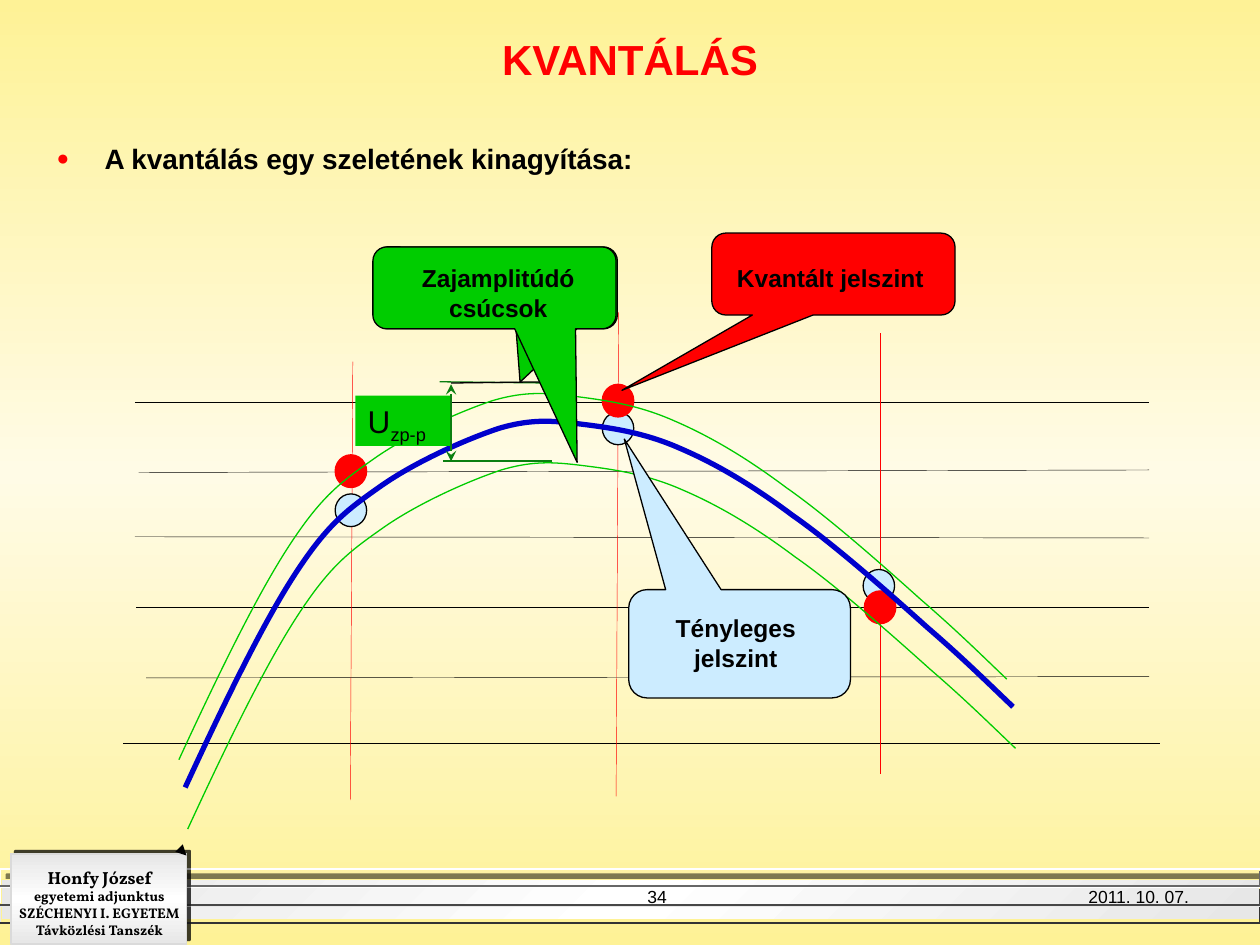
from dataclasses import dataclass

from lxml import etree
from pptx import Presentation
from pptx import util as u
from pptx.dml.color import RGBColor
from pptx.enum import shapes, text
from pptx.oxml.ns import qn


@dataclass(frozen=True)
class Theme:
    black: str = "000000"
    white: str = "FFFFFF"
    red: str = "FF0000"
    green: str = "00CC00"
    moss: str = "0B7F11"
    blue: str = "0000CC"
    sky: str = "CCECFF"
    edge: str = "DADADA"
    cream: tuple = ("FEF296", "FFFBE6", "FEF296")
    steel: tuple = ("E7E7E7", "FFFFFF", "E7E7E7")
    light: tuple = ("FFFFFF", "FFFFFF", "E8E8E8")
    dark: tuple = ("676767", "474747", "333333")
    sans: str = "Arial"
    serif: str = "Vollkorn"
    head: int = 24
    list: int = 16
    mark: int = 18
    label: int = 14
    name: int = 10
    small: int = 8
    hair: float = 0.25
    thin: float = 0.75
    rim: float = 1
    bold: float = 3


T = Theme()
KIND = shapes.MSO_SHAPE
LEFT, MID, RIGHT = text.PP_ALIGN.LEFT, text.PP_ALIGN.CENTER, text.PP_ALIGN.RIGHT
TOP, BASE = text.MSO_ANCHOR.TOP, text.MSO_ANCHOR.BOTTOM

ROWS = [(10.7, 31.9, 91.2, 31.9), (11, 37.5, 91.2, 37.3), (10.7, 42.6, 91.2, 42.7),
        (10.8, 48.2, 91.2, 48.2), (11.6, 53.8, 91.2, 53.7), (9.8, 59, 92.1, 59)]
COLS = [(69.9, 61.4, 69.9, 26.4), (27.8, 63.5, 28, 28.7), (48.9, 63.2, 49.1, 24.8)]
DOTS = [(T.sky, T.black, [(26.6, 39.2), (47.8, 32.7), (68.5, 45.2)]),
        (T.red, T.red, [(68.6, 46.9), (47.8, 30.5), (26.6, 36.1)])]
WAVE = [(14.7, 62.5), (17.7, 56), (20.8, 49.6), (23.4, 45.6), (26, 41.6), (27.5, 40.5),
        (30.2, 38.6), (32.9, 36.7), (36.9, 34.9), (39.6, 34), (42.3, 33.2), (44, 33.4),
        (46.4, 33.7), (48.8, 34), (51.3, 34.4), (54, 35.6), (56.8, 36.8), (59.7, 38.5),
        (62.9, 40.9), (66.2, 43.2), (70.7, 47.2), (73.6, 49.8), (76.5, 52.3), (78.4, 54.2),
        (80.4, 56.1)]


def cell(*nums):
    return [u.Inches(n / 10) for n in nums]


def put(thing, **vals):
    for key, val in vals.items():
        setattr(thing, key, val)


def node(root, tag, **vals):
    return etree.SubElement(root, qn(tag), {key: str(val) for key, val in vals.items()})


def blend(fill, root, tones, angle):
    fill.gradient()
    fill.gradient_angle = angle
    stops = root.find(".//" + qn("a:gsLst"))
    for old in list(stops):
        stops.remove(old)
    for i, tone in enumerate(tones):
        stop = node(stops, "a:gs", pos=i * 100000 // (len(tones) - 1))
        node(stop, "a:srgbClr", val=tone)


def ink(line, tone, width):
    line.color.rgb = RGBColor.from_string(tone)
    line.width = u.Pt(width)


def write(frame, lines, size, face=T.sans, tone=T.black, bold=False, align=LEFT, anchor=TOP):
    put(frame, word_wrap=True, vertical_anchor=anchor, auto_size=text.MSO_AUTO_SIZE.NONE)
    for i, words in enumerate(lines):
        para = frame.add_paragraph() if i else frame.paragraphs[0]
        para.alignment = align
        run = para.add_run()
        run.text = words
        put(run.font, name=face, size=u.Pt(size), bold=bold)
        run.font.color.rgb = RGBColor.from_string(tone)


def label(slide, box, lines, size, **look):
    frame = slide.shapes.add_textbox(*cell(*box)).text_frame
    write(frame, lines, size, **look)
    return frame


def block(slide, kind, box, tone, edge=None, bends=()):
    shape = slide.shapes.add_shape(kind, *cell(*box))
    shape.shadow.inherit = False
    shape.fill.solid()
    shape.fill.fore_color.rgb = RGBColor.from_string(tone)
    if edge:
        ink(shape.line, edge, T.thin)
    else:
        shape.line.fill.background()
    for i, bend in enumerate(bends):
        shape.adjustments[i] = bend
    return shape


def plate(slide, box, edge, angle, drop):
    shape = block(slide, KIND.RECTANGLE, box, T.white, edge)
    shape.line.width = u.Pt(T.rim)
    blend(shape.fill, shape.element, T.steel, angle)
    cast = node(shape.element.spPr.find(qn("a:effectLst")), "a:outerShdw", blurRad=0,
                dist=int(u.Pt(drop)), dir=315 * 60000, algn="ctr", rotWithShape=0)
    node(node(cast, "a:srgbClr", val=T.black), "a:alpha", val=50000)


def rule(slide, ends, tone, width, **tips):
    line = slide.shapes.add_connector(shapes.MSO_CONNECTOR.STRAIGHT, *cell(*ends))
    ink(line.line, tone, width)
    for tip, kind in tips.items():
        node(line.line._get_or_add_ln(), f"a:{tip}End", type=kind)
    node(line.element.spPr, "a:effectLst")


def trace(slide, dots, tone, width):
    dots = [cell(*dot) for dot in dots]
    pen = slide.shapes.build_freeform(*dots[0])
    pen.add_line_segments(dots[1:], close=False)
    shape = pen.convert_to_shape()
    shape.shadow.inherit = False
    shape.fill.background()
    ink(shape.line, tone, width)
    return shape


def bow(shape):
    steps = list(shape.element.iter(qn("a:lnTo")))
    track = steps[0].getparent()
    for i in range(0, len(steps), 3):
        bend = node(track, "a:cubicBezTo")
        for step in steps[i:i + 3]:
            bend.append(step[0])
            track.remove(step)


def heads(slide):
    title, body = slide.placeholders
    for holder, box in ((title, (7.5, 1.3, 85, 5.9)), (body, (3.5, 10.7, 93.7, 55.9))):
        put(holder, **dict(zip(("left", "top", "width", "height"), cell(*box))))
        holder.element.getparent().append(holder.element)
    write(title.text_frame, ["KVANTÁLÁS"], T.head, tone=T.red, bold=True, align=MID, anchor=BASE)
    write(body.text_frame, ["A kvantálás egy szeletének kinagyítása:"], T.list, bold=True)
    props = body.text_frame.paragraphs[0]._p.get_or_add_pPr()
    props.set("marL", str(u.Inches(0.38)))
    props.set("indent", str(u.Inches(-0.38)))
    node(node(props, "a:buClr"), "a:srgbClr", val=T.red)
    node(props, "a:buSzPct", val=75000)
    node(props, "a:buFont", typeface=T.sans)
    node(props, "a:buChar", char="●")


def foot(slide):
    badge = (0.9, 67.8, 13.9, 7.1)
    plate(slide, (0.1, 69.8, 99.9, 3.2), T.cream[0], 315, 4.2)
    plate(slide, badge, T.edge, 90, 2.8)
    for tones, start, turn in ((T.light, 69, (0, 0)), (T.dark, 69.1, (100, 1.25))):
        for i, tone in enumerate(tones):
            top = start + 1.45 * i
            ends = [(0, top + 1.25), (turn[0], top + turn[1]), (100, top)]
            if turn[0]:
                ends.reverse()
            trace(slide, ends, tone, T.rim)
    plate(slide, badge, T.edge, 90, 2.8)
    names = ["Honfy József", "egyetemi adjunktus", "SZÉCHENYI I. EGYETEM", "Távközlési Tanszék"]
    frame = label(slide, (0, 68.3, 15.8, 6.7), names, T.small, face=T.serif, bold=True, align=MID)
    frame.paragraphs[0].runs[0].font.size = u.Pt(T.name)
    label(slide, (85.4, 69.8, 14.6, 3.1), ["2011. 10. 07."], T.name)
    label(slide, (48.4, 69.8, 5.5, 3.1), ["34"], T.name, align=RIGHT)


def graph(slide):
    rule(slide, (14.75, 67.85, 14.8, 67.9), T.black, T.thin, tail="triangle")
    for lines, tone in ((ROWS, T.black), (COLS, T.red)):
        for ends in lines:
            rule(slide, ends, tone, T.hair)
    for tone, edge, spots in DOTS:
        for spot in spots:
            block(slide, KIND.OVAL, (*spot, 2.5, 2.6), tone, edge)
    for right, down, tone, width in ((-0.5, -2.2, T.green, T.thin), (0.2, 3.3, T.green, T.thin),
                                     (0, 0, T.blue, T.bold)):
        bow(trace(slide, [(x + right, y + down) for x, y in WAVE], tone, width))


def notes(slide):
    rule(slide, (43.6, 30.4, 34.9, 30.3), T.moss, T.thin)
    rule(slide, (43.8, 36.6, 35.2, 36.6), T.moss, T.thin)
    rule(slide, (35.8, 30.5, 35.8, 36.6), T.moss, T.thin, head="stealth", tail="stealth")
    frame = block(slide, KIND.RECTANGLE, (28.2, 31.4, 7.5, 4), T.green).text_frame
    write(frame, ["U"], T.mark)
    sub = frame.paragraphs[0].add_run()
    sub.text = "zp-p"
    put(sub.font, name=T.sans, size=u.Pt(T.mark))
    sub.font.color.rgb = RGBColor.from_string(T.black)
    sub.font._element.set("baseline", "-25000")

    call = KIND.ROUNDED_RECTANGULAR_CALLOUT
    block(slide, call, (29.7, 19.6, 19.3, 6.5), T.green, T.black, (0.1, 1.15, 0.17))
    rule(slide, (43.6, 30.3, 35.8, 30.4), T.black, T.thin)
    for box, tone, bends, words, area, align in (
            ((29.6, 19.6, 19.3, 6.5), T.green, (0.34, 2.13, 0.17),
             "Zajamplitúdó csúcsok", (31.2, 20.4, 16.7, 5.7), MID),
            ((49.9, 46.8, 17.6, 8.6), T.sky, (-0.52, -1.89, 0.17),
             "Tényleges jelszint", (51.2, 48.2, 14.4, 5.7), MID),
            ((56.5, 18.5, 19.3, 6.5), T.red, (-0.87, 1.42, 0.17),
             "Kvantált jelszint", (57.5, 20.4, 17.1, 3.3), LEFT)):
        block(slide, call, box, tone, T.black, bends)
        label(slide, area, [words], T.label, bold=True, align=align)


def main():
    deck = Presentation()
    put(deck, **dict(zip(("slide_width", "slide_height"), cell(100, 75))))
    slide = deck.slides.add_slide(deck.slide_layouts[1])
    blend(slide.background.fill, slide.element, T.cream, 90)
    for draw in (foot, heads, graph, notes):
        draw(slide)
    deck.save("out.pptx")


if __name__ == "__main__":
    main()
